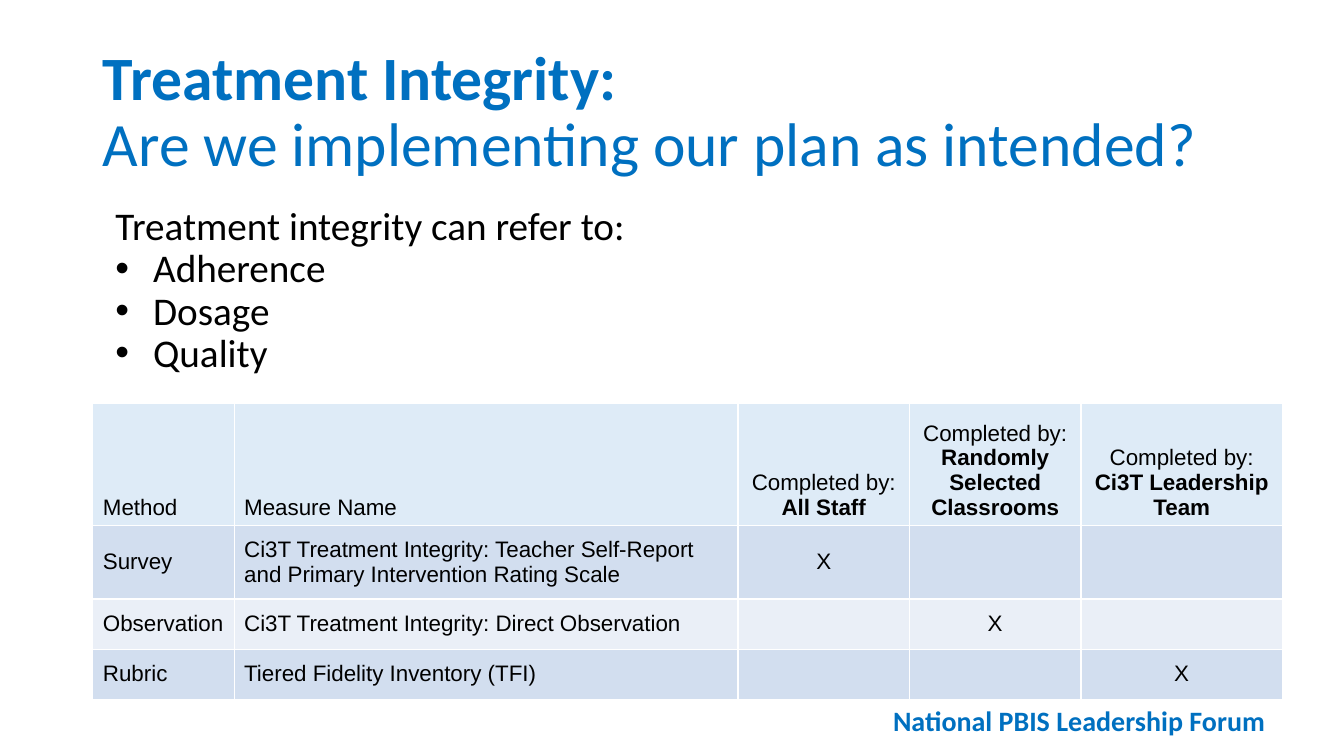
from dataclasses import dataclass

from lxml import etree
from pptx import Presentation, util as u
from pptx.dml import color
from pptx.enum import text
from pptx.oxml import ns


@dataclass(frozen=True)
class Theme:
    """Colours, fonts and type sizes of the slide."""
    accent: str = "0070C0"
    ink: str = "000000"
    border: str = "FFFFFF"
    header: str = "DEEBF7"
    bands: tuple = ("D2DEEF", "EAEFF7")
    face: str = "Calibri"
    table_face: str = "Arial"
    title_size: int = 44
    body_size: int = 28
    table_size: int = 16
    footer_size: int = 20


THEME = Theme()
LEFT, WIDTH = 2.34, 29.21
COLUMNS = (3.56, 12.7, 4.32, 4.32, 5.08)
ROWS = (3.07, 1.78, 1.16, 1.16)
HEADINGS = (
    ("Method",),
    ("Measure Name",),
    ("Completed by:", "All Staff"),
    ("Completed by:", "Randomly Selected Classrooms"),
    ("Completed by:", "Ci3T Leadership Team"),
)
MEASURES = (
    ("Survey", "Ci3T Treatment Integrity: Teacher Self-Report and Primary "
     "Intervention Rating Scale", "X", "", ""),
    ("Observation", "Ci3T Treatment Integrity: Direct Observation", "", "X", ""),
    ("Rubric", "Tiered Fidelity Inventory (TFI)", "", "", "X"),
)


def add_run(paragraph, words, size, ink, bold=False, face=THEME.face):
    """Append one formatted run to a paragraph."""
    run = paragraph.add_run()
    run.text = words
    run.font.name, run.font.size, run.font.bold = face, u.Pt(size), bold
    run.font.color.rgb = color.RGBColor.from_string(ink)


def add_frame(slide, box, anchor=text.MSO_ANCHOR.TOP):
    """Add a wrapping text box and return its frame."""
    frame = slide.shapes.add_textbox(*map(u.Cm, box)).text_frame
    frame.word_wrap = True
    frame.vertical_anchor = anchor
    return frame


def add_title(slide, box):
    """Place the two-line heading."""
    heading = add_frame(slide, box, text.MSO_ANCHOR.MIDDLE).paragraphs[0]
    heading.line_spacing = 0.9
    add_run(heading, "Treatment Integrity:", THEME.title_size, THEME.accent, True)
    heading.add_line_break()
    add_run(heading, "Are we implementing our plan as intended?",
            THEME.title_size, THEME.accent)


def set_indent(paragraph, margin, hanging=0, bullet=None):
    """Set the paragraph indent and an optional bullet."""
    properties = paragraph._p.get_or_add_pPr()
    properties.set("marL", str(u.Cm(margin)))
    properties.set("indent", str(-u.Cm(hanging)))
    if bullet:
        etree.SubElement(properties, ns.qn("a:buFont"), typeface=THEME.table_face)
        etree.SubElement(properties, ns.qn("a:buChar"), char=bullet)


def add_aspects(slide, box):
    """Place the lead-in and its bulleted aspects."""
    frame = add_frame(slide, box)
    lead = frame.paragraphs[0]
    set_indent(lead, 0.32)
    lead.line_spacing = 0.9
    add_run(lead, "Treatment integrity can refer to:", THEME.body_size, THEME.ink)
    for aspect in ("Adherence", "Dosage", "Quality"):
        item = frame.add_paragraph()
        set_indent(item, 1.27, 0.95, "•")
        item.line_spacing = 0.9
        add_run(item, aspect, THEME.body_size, THEME.ink)


def style_cell(cell, fill, anchor):
    """Fill a cell, anchor its text and draw its borders."""
    cell.vertical_anchor = anchor
    properties = cell._tc.get_or_add_tcPr()
    for side in ("a:lnL", "a:lnR", "a:lnT", "a:lnB"):
        line = etree.SubElement(properties, ns.qn(side), w=str(u.Pt(1)))
        solid = etree.SubElement(line, ns.qn("a:solidFill"))
        etree.SubElement(solid, ns.qn("a:srgbClr"), val=THEME.border)
    cell.fill.solid()
    cell.fill.fore_color.rgb = color.RGBColor.from_string(fill)


def write_cell(cell, lines, centred):
    """Write lines into a cell, with every line after the first in bold."""
    for index, words in enumerate(lines):
        frame = cell.text_frame
        paragraph = frame.add_paragraph() if index else frame.paragraphs[0]
        if centred:
            paragraph.alignment = text.PP_ALIGN.CENTER
        add_run(paragraph, words, THEME.table_size, THEME.ink, index > 0,
                THEME.table_face)


def add_measures(slide, left, top):
    """Place the table of measures and who completes them."""
    box = (left, top, sum(COLUMNS), sum(ROWS))
    table = slide.shapes.add_table(len(ROWS), len(COLUMNS),
                                   *map(u.Cm, box)).table
    table.first_row = table.horz_banding = False
    for column, width in zip(table.columns, COLUMNS):
        column.width = u.Cm(width)
    for row, height in zip(table.rows, ROWS):
        row.height = u.Cm(height)
    for index, heading in enumerate(HEADINGS):
        cell = table.cell(0, index)
        style_cell(cell, THEME.header, text.MSO_ANCHOR.BOTTOM)
        write_cell(cell, heading, index > 1)
    for row, measure in enumerate(MEASURES, 1):
        for index, words in enumerate(measure):
            cell = table.cell(row, index)
            style_cell(cell, THEME.bands[(row - 1) % 2], text.MSO_ANCHOR.MIDDLE)
            if index:
                cell.margin_top = cell.margin_bottom = u.Cm(0.25)
            if words:
                write_cell(cell, (words,), index > 1)


def add_footer(slide, box):
    """Place the name of the forum."""
    forum = add_frame(slide, box).paragraphs[0]
    forum.alignment = text.PP_ALIGN.CENTER
    add_run(forum, "National PBIS Leadership Forum", THEME.footer_size,
            THEME.accent, True)


def main():
    """Build and save the slide."""
    deck = Presentation()
    deck.slide_width, deck.slide_height = u.Cm(33.87), u.Cm(19.05)
    slide = deck.slides.add_slide(deck.slide_layouts[6])
    add_footer(slide, (21.29, 17.6, 11.81, 1.12))
    add_title(slide, (LEFT, 1.02, WIDTH, 3.68))
    add_aspects(slide, (LEFT, 5.08, WIDTH, 12.09))
    add_measures(slide, LEFT, 10.17)
    deck.save("out.pptx")


if __name__ == "__main__":
    main()
